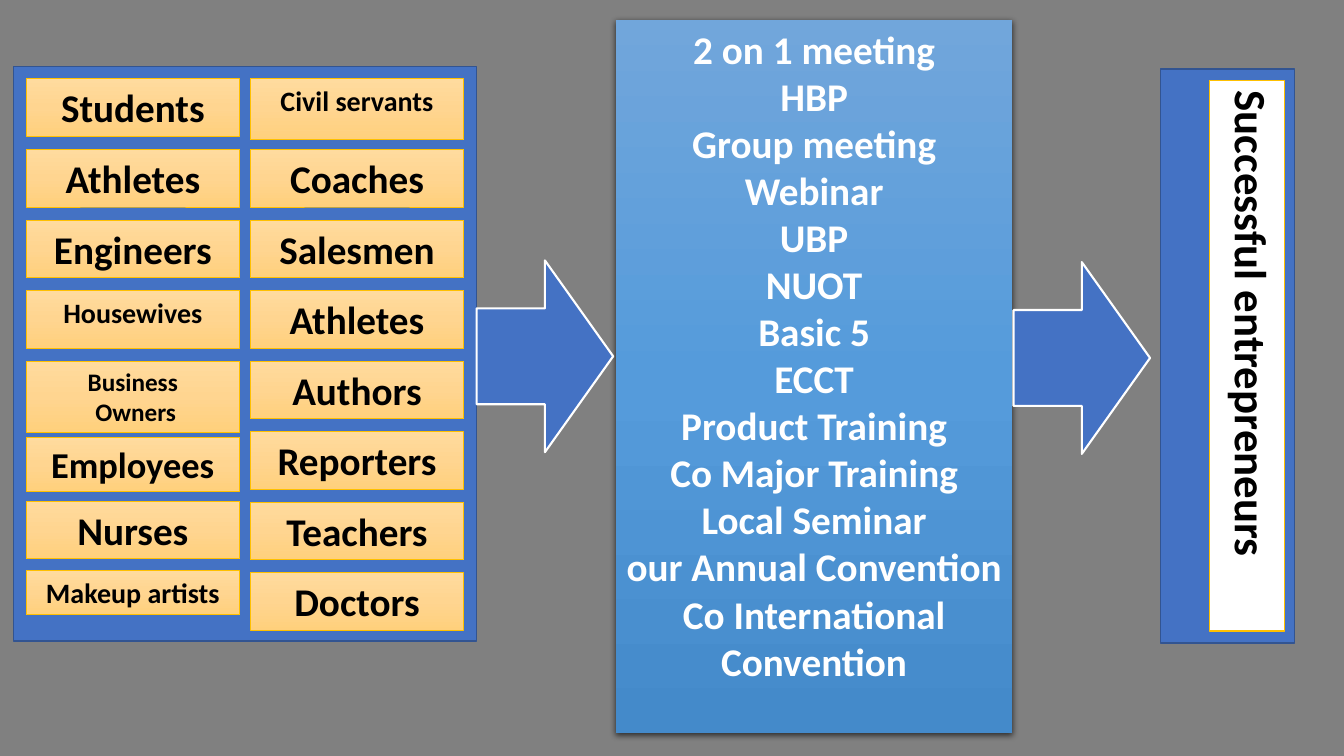
from dataclasses import dataclass

from lxml.etree import SubElement
from pptx import Presentation
from pptx.dml.color import RGBColor
from pptx.enum.shapes import MSO_SHAPE as Shp
from pptx.enum.text import MSO_ANCHOR as Anchor, MSO_AUTO_SIZE as Auto, PP_ALIGN as Align
from pptx.oxml.ns import qn
from pptx.util import Pt

BLUE, EDGE, GOLD = "4472C4", "325491", "FFC000"
CARD_FILL = ("FFDB9E", "FFD590", "FFD07C")
PANEL_FILL = ("71A6DB", "559BDB", "448ACA")
CARD_W, CARD_TOP, CARD_STEP = 152.6, 56.3, 50.4


@dataclass
class Card:
    text: str
    size: float = 28
    height: float = 41.2
    shift: float = 0  # offset from the regular row position


COLUMNS = {
    18.6: [
        Card("Students"), Card("Athletes"), Card("Engineers"),
        Card("Housewives", 20), Card("Business\n Owners", 18, 51),
        Card("Employees", 26, 38.8, 4), Card("Nurses", shift=-0.8),
        Card("Makeup artists", 20, 31.5, -1.5),
    ],
    178.7: [
        Card("Civil servants", 20, 43.6), Card("Coaches"), Card("Salesmen"),
        Card("Athletes"), Card("Authors"), Card("Reporters"),
        Card("Teachers"), Card("Doctors"),
    ],
}

STEPS = [
    "2 on 1 meeting", "HBP", "Group meeting", "Webinar", "UBP", "NUOT",
    "Basic 5", "ECCT", "Product Training", "Co Major Training",
    "Local Seminar", "our Annual Convention", "Co International Convention",
]


def rgb(color: str) -> RGBColor:
    return RGBColor.from_string(color)


def set_fill(sp, colors: tuple[str, ...]) -> None:
    """One colour gives a solid fill, several an even top-down gradient."""
    if len(colors) == 1:
        sp.fill.solid()
        sp.fill.fore_color.rgb = rgb(colors[0])
        return
    sp.fill.gradient()
    sp.fill.gradient_angle = 270
    stops = sp.element.spPr.find(qn("a:gradFill")).find(qn("a:gsLst"))
    for stop in list(stops):
        stops.remove(stop)
    for i, color in enumerate(colors):
        stop = SubElement(stops, qn("a:gs"), pos=str(i * 100000 // (len(colors) - 1)))
        SubElement(stop, qn("a:srgbClr"), val=color)


def add_box(shapes, kind, left: float, top: float, width: float, height: float,
            colors: tuple[str, ...], line: str, weight: float):
    sp = shapes.add_shape(kind, Pt(left), Pt(top), Pt(width), Pt(height))
    set_fill(sp, colors)
    sp.line.color.rgb = rgb(line)
    sp.line.width = Pt(weight)
    sp.shadow.inherit = False
    return sp


def write(sp, paragraphs: list[str], size: float, color: str) -> None:
    tf = sp.text_frame
    tf.word_wrap = True
    tf.auto_size = Auto.SHAPE_TO_FIT_TEXT
    tf.vertical_anchor = Anchor.TOP
    for i, text in enumerate(paragraphs):
        p = tf.add_paragraph() if i else tf.paragraphs[0]
        p.alignment = Align.CENTER
        p.space_before = Pt(0)
        for j, part in enumerate(text.split("\n")):
            if j:
                p.add_line_break()
            r = p.add_run()
            r.text = part
            r.font.name = "Calibri"
            r.font.size = Pt(size)
            r.font.bold = True
            r.font.color.rgb = rgb(color)


def add_shadow(sp) -> None:
    sp.shadow.inherit = False
    effects = sp.element.spPr.find(qn("a:effectLst"))
    shadow = SubElement(effects, qn("a:outerShdw"), blurRad=str(Pt(4.5)),
                        dist=str(Pt(1.5)), dir="5400000", rotWithShape="0")
    color = SubElement(shadow, qn("a:srgbClr"), val="000000")
    SubElement(color, qn("a:alpha"), val="63000")


def main() -> None:
    prs = Presentation()
    prs.slide_width, prs.slide_height = Pt(960), Pt(540)
    s = prs.slides.add_slide(prs.slide_layouts[1])
    s.background.fill.solid()
    s.background.fill.fore_color.rgb = rgb("808080")
    title = s.shapes.title.element
    title.getparent().remove(title)

    # Training list in the middle
    panel = s.placeholders[1]
    panel.left, panel.top, panel.width, panel.height = Pt(440), Pt(14.3), Pt(283), Pt(516.3)
    set_fill(panel, PANEL_FILL)
    add_shadow(panel)
    write(panel, STEPS, 28, "FFFFFF")
    for p in panel.text_frame.paragraphs:
        pPr = p._p.get_or_add_pPr()
        pPr.set("marL", "0")
        pPr.set("indent", "0")
        SubElement(pPr, qn("a:buNone"))

    # Occupations on the left
    people = s.shapes.add_group_shape().shapes
    add_box(people, Shp.RECTANGLE, 9.5, 47.7, 331, 410.1, (BLUE,), EDGE, 1)
    for left, cards in COLUMNS.items():
        for row, card in enumerate(cards):
            top = CARD_TOP + row * CARD_STEP + card.shift
            sp = add_box(people, Shp.RECTANGLE, left, top, CARD_W, card.height,
                         CARD_FILL, GOLD, 0.5)
            write(sp, [card.text], card.size, "000000")

    # Result on the right
    result = s.shapes.add_group_shape().shapes
    add_box(result, Shp.RECTANGLE, 829, 49.2, 95.8, 410.1, (BLUE,), EDGE, 1)
    sp = add_box(result, Shp.RECTANGLE, 864, 57.6, 53.6, 393.2, ("FFFFFF",), GOLD, 1)
    write(sp, ["Successful entrepreneurs"], 32, "000000")
    sp.text_frame._txBody.bodyPr.set("vert", "eaVert")

    # Arrows between the stages
    for left, top in ((340.5, 186), (724, 187.2)):
        add_box(s.shapes, Shp.RIGHT_ARROW, left, top, 97.5, 137, (BLUE,), "FFFFFF", 1.5)

    prs.save("out.pptx")


if __name__ == "__main__":
    main()
